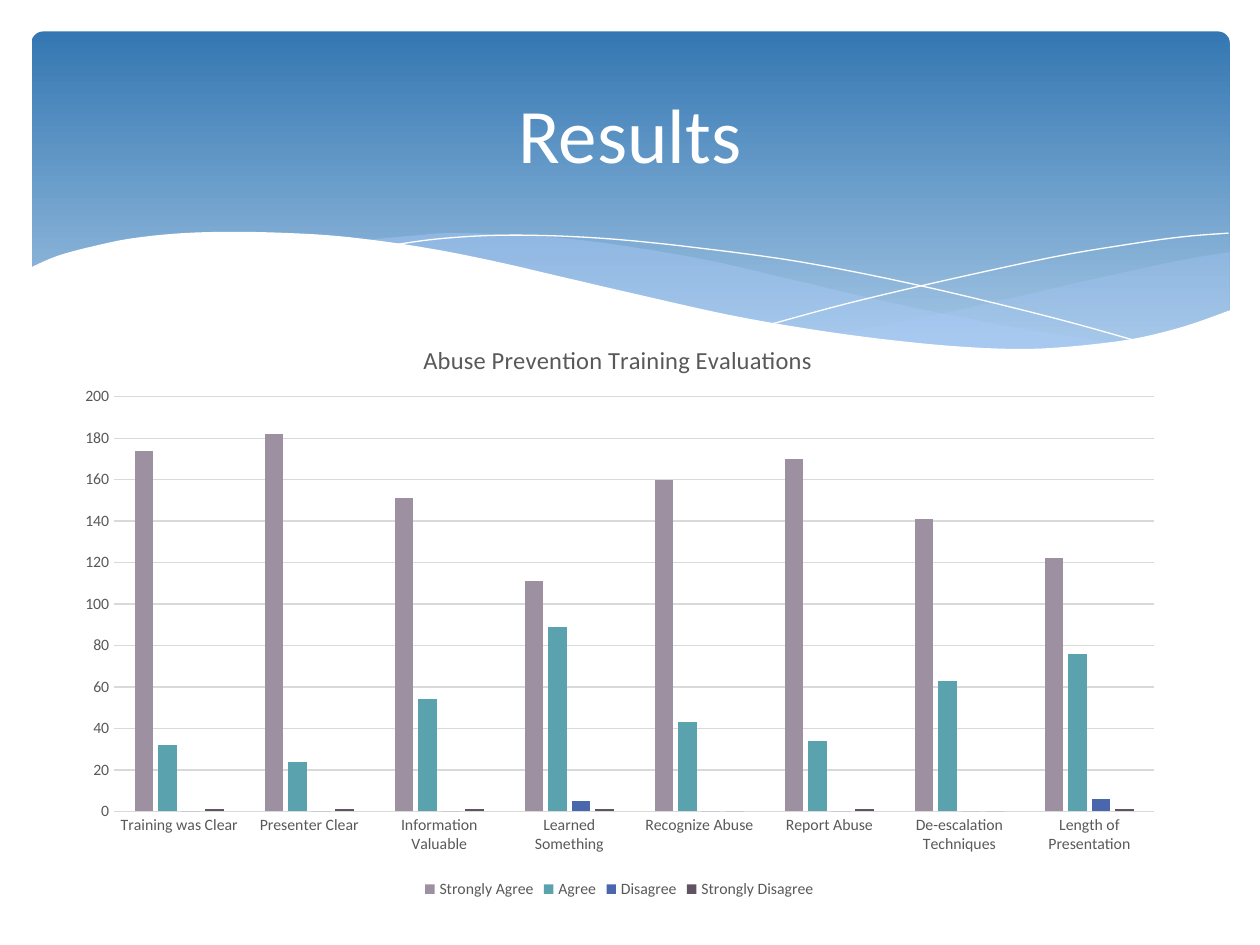
from dataclasses import dataclass
from typing import Optional

from lxml import etree
from pptx import Presentation
from pptx.chart.data import CategoryChartData
from pptx.dml.color import RGBColor
from pptx.enum import chart as charts, shapes, text
from pptx.oxml import ns
from pptx.util import Inches, Pt

Point = tuple[float, float]


@dataclass(frozen=True)
class Theme:
    font: str = "Calibri"
    white: str = "FFFFFF"
    banner_top: str = "3477B2"
    banner_bottom: str = "A1C4E3"
    wave: str = "ACCBF9"
    grey_text: str = "595959"
    grid: str = "D9D9D9"
    title_size: int = 44
    chart_title_size: int = 14
    label_size: int = 9


@dataclass(frozen=True)
class Wave:
    """Smooth curves joined end to end; filled waves are closed."""
    curves: list[list[Point]]
    fill: Optional[str] = None
    opacity: int = 100


@dataclass(frozen=True)
class Answer:
    name: str
    counts: list[int]
    color: str


THEME = Theme()

WAVES = [
    Wave([[(9.76, 2), (9.35, 2.07), (8.61, 2.23), (7.79, 2.42), (7.06, 2.57), (6.61, 2.65)],
          [(6.61, 2.65), (7.05, 2.71), (7.57, 2.76), (8.03, 2.78), (8.54, 2.76),
           (9.05, 2.69), (9.42, 2.59), (9.76, 2.47)]], THEME.wave, 29),
    Wave([[(8.93, 2.73), (8.37, 2.65), (7.75, 2.54), (7.06, 2.4), (6.29, 2.22), (5.69, 2.08),
           (5.14, 1.98), (4.65, 1.91), (4.2, 1.87), (3.61, 1.85), (3.28, 1.87), (2.86, 1.91)],
          [(2.86, 1.91), (3.42, 1.99), (4.04, 2.11), (4.91, 2.32), (5.66, 2.48), (6.34, 2.61),
           (6.95, 2.7), (7.48, 2.76), (7.96, 2.78), (8.48, 2.77), (8.93, 2.73)]],
         THEME.wave, 40),
    Wave([[(3.09, 1.95), (3.44, 1.9), (3.87, 1.87), (4.33, 1.87), (4.89, 1.9), (5.56, 1.97),
           (6.36, 2.08), (7.27, 2.26), (8.31, 2.51), (9.07, 2.72)]]),
    Wave([[(6.13, 2.57), (6.72, 2.41), (7.48, 2.23), (8.36, 2.04), (8.95, 1.94),
           (9.38, 1.88), (9.75, 1.85)]]),
    Wave([[(9.77, 2.46), (9.4, 2.59), (8.99, 2.69), (8.5, 2.75), (8.09, 2.77), (7.61, 2.75),
           (7.08, 2.7), (6.48, 2.62), (5.79, 2.5), (5.03, 2.33), (4.47, 2.2), (3.91, 2.07),
           (3.4, 1.97), (2.92, 1.9), (2.5, 1.86), (1.93, 1.84), (1.46, 1.85), (1.06, 1.89),
           (0.76, 1.95), (0.46, 2.03), (0.23, 2.13)],
          [(0.23, 3.29), (9.77, 3.29)]], THEME.white),
]

QUESTIONS = ["Training was Clear", "Presenter Clear", "Information Valuable",
             "Learned Something", "Recognize Abuse", "Report Abuse",
             "De-escalation Techniques", "Length of Presentation"]
ANSWERS = [
    Answer("Strongly Agree", [174, 182, 151, 111, 160, 170, 141, 122], "9D90A0"),
    Answer("Agree", [32, 24, 54, 89, 43, 34, 63, 76], "5AA2AE"),
    Answer("Disagree", [0, 0, 0, 5, 0, 0, 0, 6], "4A66AC"),
    Answer("Strongly Disagree", [1, 1, 1, 1, 0, 1, 0, 1], "605462"),
]


def rgb(color: str) -> RGBColor:
    return RGBColor.from_string(color)


def style_font(font, size: int, color: str) -> None:
    font.name, font.size, font.bold = THEME.font, Pt(size), False
    font.color.rgb = rgb(color)


def smooth(knots: list[Point], steps: int = 5) -> list[Point]:
    """Catmull-Rom curve through the knots."""
    if len(knots) < 3:
        return knots
    padded = [knots[0], *knots, knots[-1]]
    curve = [knots[0]]
    for a, b, c, d in zip(padded, padded[1:], padded[2:], padded[3:]):
        for step in range(1, steps + 1):
            t = step / steps
            curve.append(tuple(
                0.5 * (2 * q + (r - p) * t + (2 * p - 5 * q + 4 * r - s) * t ** 2
                       + (3 * q - p - 3 * r + s) * t ** 3)
                for p, q, r, s in zip(a, b, c, d)))
    return curve


def add_banner(page) -> None:
    banner = page.shapes.add_shape(shapes.MSO_SHAPE.ROUNDED_RECTANGLE, Inches(0.25),
                                   Inches(0.25), Inches(9.51), Inches(2.7))
    banner.adjustments[0] = 0.034
    banner.shadow.inherit = False
    banner.line.fill.background()
    banner.fill.gradient()
    banner.fill.gradient_angle = 270
    stops = zip(banner.fill.gradient_stops, (0, 0.9), (THEME.banner_top, THEME.banner_bottom))
    for stop, position, color in stops:
        stop.position = position
        stop.color.rgb = rgb(color)


def add_wave(page, wave: Wave) -> None:
    points = [(Inches(x), Inches(y)) for curve in wave.curves for x, y in smooth(curve)]
    builder = page.shapes.build_freeform(*points[0])
    builder.add_line_segments(points[1:], close=wave.fill is not None)
    shape = builder.convert_to_shape()
    shape.shadow.inherit = False
    if wave.fill is None:
        shape.fill.background()
        shape.line.color.rgb = rgb(THEME.white)
        shape.line.width = Pt(0)
        return
    shape.line.fill.background()
    shape.fill.solid()
    shape.fill.fore_color.rgb = rgb(wave.fill)
    if wave.opacity < 100:
        color = shape.fill._xPr.find(".//" + ns.qn("a:srgbClr"))
        etree.SubElement(color, ns.qn("a:alpha"), val=str(wave.opacity * 1000))


def add_title(page, words: str) -> None:
    box = page.shapes.add_textbox(Inches(0.5), Inches(0.37), Inches(9), Inches(1.37))
    frame = box.text_frame
    frame.word_wrap = True
    frame.vertical_anchor = text.MSO_ANCHOR.MIDDLE
    frame.text = words
    para = frame.paragraphs[0]
    para.alignment = text.PP_ALIGN.CENTER
    style_font(para.runs[0].font, THEME.title_size, THEME.white)


def place(parent, **settings) -> None:
    """Give a chart part a manual layout, in fractions of the chart."""
    layout = parent.find(ns.qn("c:layout"))
    if layout is None:
        layout = etree.Element(ns.qn("c:layout"))
        parent.insert(0, layout)
    manual = etree.SubElement(layout, ns.qn("c:manualLayout"))
    for name, value in settings.items():
        etree.SubElement(manual, ns.qn("c:" + name), val=str(value))


def add_results_chart(page, title: str) -> None:
    data = CategoryChartData(number_format="General")
    data.categories = QUESTIONS
    for answer in ANSWERS:
        data.add_series(answer.name, answer.counts)
    chart = page.shapes.add_chart(charts.XL_CHART_TYPE.COLUMN_CLUSTERED, Inches(0.5),
                                  Inches(2.5), Inches(8.83), Inches(4.67), data).chart
    style_font(chart.font, THEME.label_size, THEME.grey_text)

    # Columns
    plot = chart.plots[0]
    plot.gap_width, plot.overlap, plot.vary_by_categories = 219, -27, False
    for series, answer in zip(plot.series, ANSWERS):
        series.format.fill.solid()
        series.format.fill.fore_color.rgb = rgb(answer.color)

    # Axes
    for axis in (chart.category_axis, chart.value_axis):
        axis.major_tick_mark = axis.minor_tick_mark = charts.XL_TICK_MARK.NONE
        style_font(axis.tick_labels.font, THEME.label_size, THEME.grey_text)
    chart.value_axis.format.line.fill.background()
    chart.value_axis.has_major_gridlines = True
    for line in (chart.category_axis.format.line, chart.value_axis.major_gridlines.format.line):
        line.color.rgb = rgb(THEME.grid)
        line.width = Pt(0.75)

    # Title and legend
    chart.has_title = True
    frame = chart.chart_title.text_frame
    frame.text = title
    style_font(frame.paragraphs[0].runs[0].font, THEME.chart_title_size, THEME.grey_text)
    chart.has_legend = True
    chart.legend.position = charts.XL_LEGEND_POSITION.BOTTOM
    chart.legend.include_in_layout = False
    style_font(chart.legend.font, THEME.label_size, THEME.grey_text)

    place(chart.chart_title._element, xMode="edge", yMode="edge", x=0.32, y=0.04)
    place(chart._chartSpace.chart.plotArea, layoutTarget="inner", xMode="edge", yMode="edge",
          x=0.046, y=0.139, w=0.935, h=0.705)


def main() -> None:
    deck = Presentation()
    deck.slide_width, deck.slide_height = Inches(10), Inches(7.5)
    page = deck.slides.add_slide(deck.slide_layouts[6])
    add_banner(page)
    for wave in WAVES:
        add_wave(page, wave)
    add_title(page, "Results")
    add_results_chart(page, "Abuse Prevention Training Evaluations")
    deck.save("out.pptx")


if __name__ == "__main__":
    main()
